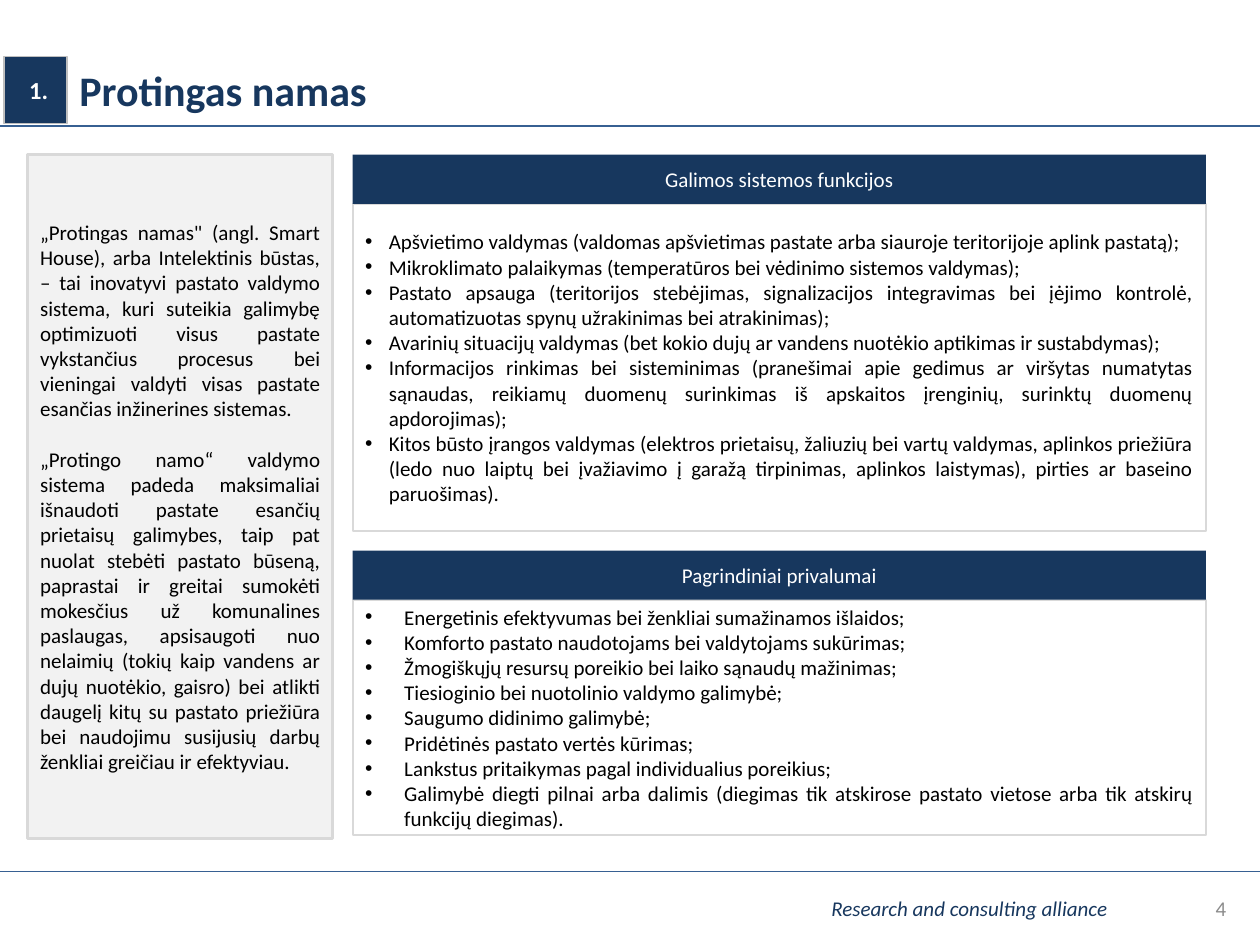
from lxml import etree
from pptx import Presentation
from pptx.dml.color import RGBColor
from pptx.enum.shapes import MSO_CONNECTOR, MSO_SHAPE
from pptx.enum.text import MSO_ANCHOR, PP_ALIGN
from pptx.oxml.ns import qn
from pptx.util import Cm, Pt

RECTANGLE = MSO_SHAPE.RECTANGLE
STRAIGHT = MSO_CONNECTOR.STRAIGHT
MIDDLE = MSO_ANCHOR.MIDDLE
LEFT, CENTER, RIGHT, JUSTIFY = PP_ALIGN.LEFT, PP_ALIGN.CENTER, PP_ALIGN.RIGHT, PP_ALIGN.JUSTIFY

NAVY = RGBColor(0x17, 0x37, 0x5E)
BLUE = RGBColor(0x37, 0x60, 0x92)
BLACK = RGBColor(0x00, 0x00, 0x00)
WHITE = RGBColor(0xFF, 0xFF, 0xFF)
PALE_GRAY = RGBColor(0xF2, 0xF2, 0xF2)
BORDER_GRAY = RGBColor(0xD9, 0xD9, 0xD9)
BADGE_GRAY = RGBColor(0xBF, 0xBF, 0xBF)
NUMBER_GRAY = RGBColor(0x8C, 0x8C, 0x8C)

SLIDE_WIDTH, SLIDE_HEIGHT = 25.4, 19.05
CONTENT_TOP = 3.12
SECTION_LEFT, SECTION_WIDTH, HEADER_HEIGHT = 7.11, 17.2, 0.99

DEFINITION = [
    "„Protingas namas\" (angl. Smart House), arba Intelektinis būstas, – tai inovatyvi pastato valdymo sistema, kuri suteikia galimybę optimizuoti visus pastate vykstančius procesus bei vieningai valdyti visas pastate esančias inžinerines sistemas.",
    "„Protingo namo“ valdymo sistema padeda maksimaliai išnaudoti pastate esančių prietaisų galimybes, taip pat nuolat stebėti pastato būseną, paprastai ir greitai sumokėti mokesčius už komunalines paslaugas, apsisaugoti nuo nelaimių (tokių kaip vandens ar dujų nuotėkio, gaisro) bei atlikti daugelį kitų su pastato priežiūra bei naudojimu susijusių darbų ženkliai greičiau ir efektyviau.",
]
FUNCTIONS = [
    "Apšvietimo valdymas (valdomas apšvietimas pastate arba siauroje teritorijoje aplink pastatą);",
    "Mikroklimato palaikymas (temperatūros bei vėdinimo sistemos valdymas);",
    "Pastato apsauga (teritorijos stebėjimas, signalizacijos integravimas bei įėjimo kontrolė, automatizuotas spynų užrakinimas bei atrakinimas);",
    "Avarinių situacijų valdymas (bet kokio dujų ar vandens nuotėkio aptikimas ir sustabdymas);",
    "Informacijos rinkimas bei sisteminimas (pranešimai apie gedimus ar viršytas numatytas sąnaudas, reikiamų duomenų surinkimas iš apskaitos įrenginių, surinktų duomenų apdorojimas);",
    "Kitos būsto įrangos valdymas (elektros prietaisų, žaliuzių bei vartų valdymas, aplinkos priežiūra (ledo nuo laiptų bei įvažiavimo į garažą tirpinimas, aplinkos laistymas), pirties ar baseino paruošimas).",
]
BENEFITS = [
    "Energetinis efektyvumas bei ženkliai sumažinamos išlaidos;",
    "Komforto pastato naudotojams bei valdytojams sukūrimas;",
    "Žmogiškųjų resursų poreikio bei laiko sąnaudų mažinimas;",
    "Tiesioginio bei nuotolinio valdymo galimybė;",
    "Saugumo didinimo galimybė;",
    "Pridėtinės pastato vertės kūrimas;",
    "Lankstus pritaikymas pagal individualius poreikius;",
    "Galimybė diegti pilnai arba dalimis (diegimas tik atskirose pastato vietose arba tik atskirų funkcijų diegimas).",
]


class SlideBuilder:
    font_name = "Calibri"

    def __init__(self, slide):
        self.slide = slide

    def rule(self, top):
        line = self.slide.shapes.add_connector(STRAIGHT, Cm(0), Cm(top), Cm(SLIDE_WIDTH), Cm(top))
        line.line.color.rgb = BLUE
        line.line.width = Pt(1)
        etree.SubElement(line._element.spPr, qn("a:effectLst"))

    def fill_text(self, frame, paragraphs, size=12, color=BLACK, align=LEFT,
                  bold=False, italic=False, gap=0, indent=None):
        frame.word_wrap = True
        frame.vertical_anchor = MIDDLE
        for index, content in enumerate(paragraphs):
            paragraph = frame.paragraphs[0] if index == 0 else frame.add_paragraph()
            paragraph.text = content
            paragraph.alignment = align
            if index and gap:
                paragraph.space_before = Pt(gap)
            if indent:
                self.bullet(paragraph, indent)
            font = paragraph.font
            font.name = self.font_name
            font.size = Pt(size)
            font.bold = bold
            font.italic = italic
            font.color.rgb = color

    def bullet(self, paragraph, indent):
        properties = paragraph._p.get_or_add_pPr()
        properties.set("marL", str(Cm(indent)))
        properties.set("indent", str(-Cm(indent)))
        etree.SubElement(properties, qn("a:buFont"), typeface="Arial")
        etree.SubElement(properties, qn("a:buChar"), char="•")

    def text(self, left, top, width, height, content, **style):
        box = self.slide.shapes.add_textbox(Cm(left), Cm(top), Cm(width), Cm(height))
        self.fill_text(box.text_frame, [content], **style)

    def panel(self, left, top, width, height, paragraphs, fill, border=None,
              border_width=1, inset=0.25, **style):
        shape = self.slide.shapes.add_shape(RECTANGLE, Cm(left), Cm(top), Cm(width), Cm(height))
        shape.shadow.inherit = False
        shape.fill.solid()
        shape.fill.fore_color.rgb = fill
        if border:
            shape.line.color.rgb = border
            shape.line.width = Pt(border_width)
        else:
            shape.line.fill.background()
        shape.text_frame.margin_left = Cm(inset)
        self.fill_text(shape.text_frame, paragraphs, **style)

    def section(self, top, body_height, heading, items, indent):
        self.panel(SECTION_LEFT, top + HEADER_HEIGHT, SECTION_WIDTH, body_height, items,
                   WHITE, BORDER_GRAY, align=JUSTIFY, indent=indent)
        self.panel(SECTION_LEFT, top, SECTION_WIDTH, HEADER_HEIGHT, [heading],
                   NAVY, color=WHITE, align=CENTER)


def main():
    presentation = Presentation()
    presentation.slide_width = Cm(SLIDE_WIDTH)
    presentation.slide_height = Cm(SLIDE_HEIGHT)
    builder = SlideBuilder(presentation.slides.add_slide(presentation.slide_layouts[6]))

    for top in (2.54, 17.57):
        builder.rule(top)
    builder.text(16.51, 17.93, 8.79, 0.74, "Research and consulting alliance", color=NAVY, italic=True)
    builder.text(19.05, 17.8, 5.92, 1.01, "4", color=NUMBER_GRAY, align=RIGHT)
    builder.text(1.35, 1.14, 22.5, 1.35, "Protingas namas", size=24, color=NAVY, bold=True)
    builder.panel(0.56, CONTENT_TOP, 6.15, 13.79, DEFINITION, PALE_GRAY, BORDER_GRAY,
                  border_width=1.5, align=JUSTIFY, gap=14.4)
    builder.section(CONTENT_TOP, 6.6, "Galimos sistemos funkcijos", FUNCTIONS, 0.48)
    builder.section(11.1, 4.75, "Pagrindiniai privalumai", BENEFITS, 0.79)
    builder.panel(0.08, 1.14, 1.27, 1.35, ["1."], NAVY, BADGE_GRAY,
                  inset=0.51, size=14, color=WHITE, bold=True)

    presentation.save("out.pptx")


if __name__ == "__main__":
    main()
